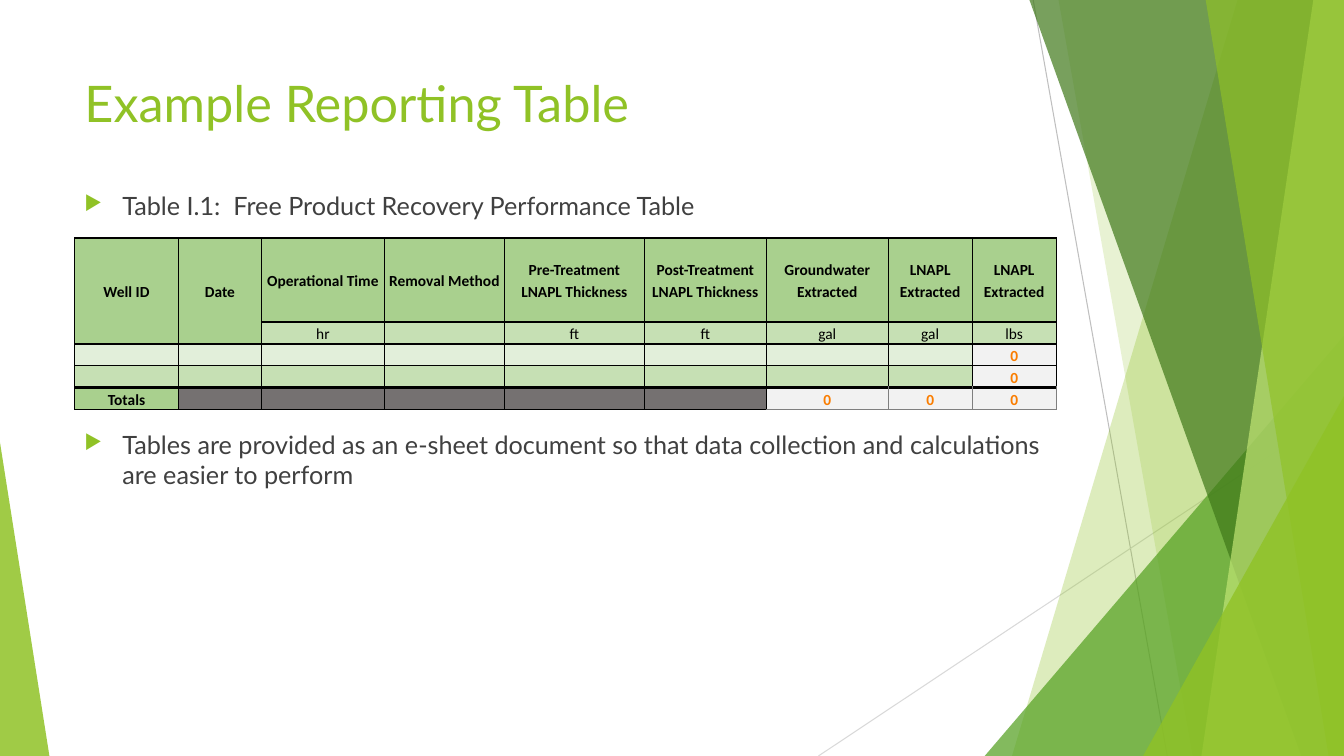
from dataclasses import dataclass
from typing import Any

from lxml.etree import SubElement
from pptx import Presentation
from pptx.dml.color import RGBColor
from pptx.enum.shapes import MSO_CONNECTOR, MSO_SHAPE
from pptx.enum.text import MSO_ANCHOR, PP_ALIGN
from pptx.oxml.ns import qn
from pptx.slide import Slide
from pptx.util import Pt

COLORS = {
    "lime": "90C226", "green": "54A021", "forest": "3F7819", "pale": "C0E474",
    "ray_dark": "BFBFBF", "ray_light": "D9D9D9", "body": "404040",
    "black": "000000", "gray_edge": "7F7F7F", "orange": "FA7D00",
    "header": "A9D08E", "units": "C6E0B4", "entry": "E2EFDA",
    "result": "F2F2F2", "blocked": "757171",
}
WIDTH, HEIGHT = 960, 540
FACET_TOP = -0.72


@dataclass
class Ray:
    start: tuple[float, float]
    end: tuple[float, float]
    color: str


@dataclass
class Facet:
    """Band from a slanted left edge to the right side of the slide."""
    top_x: float
    bottom_x: float
    color: str
    opacity: int


@dataclass
class Corner:
    """Right triangle standing on the bottom of the slide."""
    left: float
    top: float
    width: float
    apex: float
    color: str
    opacity: int


@dataclass
class Caption:
    text: str
    top: float
    width: float
    height: float
    size: float
    color: str
    bulleted: bool


RAYS = [
    Ray((738, 0), (833.8, HEIGHT), "ray_dark"),
    Ray((WIDTH, 290.2), (584.6, HEIGHT), "ray_light"),
]
BACKDROP = [
    Facet(884.2, 722.9, "lime", 30),
    Facet(756, 851.8, "lime", 20),
    Corner(703.4, 239.8, 256.6, 1, "green", 72),
    Facet(735.1, 929.5, "forest", 70),
    Facet(938.2, 858.2, "pale", 70),
    Facet(861.1, 949, "lime", 65),
    Corner(816.5, 283, 143.5, 1, "lime", 80),
    Corner(0, 316.1, 35.3, 0, "lime", 85),
]
LEFT = 53.3
TITLE = Caption("Example Reporting Table", 48.2, 676.8, 103.7, 36, "lime", False)
BULLETS = [
    Caption("Table I.1:  Free Product Recovery Performance Table",
            132.5, 701.3, 37.4, 18, "body", True),
    Caption("Tables are provided as an e-sheet document so that data collection "
            "and calculations are easier to perform",
            303.1, 701.3, 54, 18, "body", True),
]

# Table content and the widths of its heavier rules
COLUMN_WIDTHS = [74.2, 59.3, 87.9, 85.7, 100, 87.1, 87.1, 60, 60]
ROW_HEIGHTS = [60, 15.7, 15.7, 15.7, 15.7]
ROWS = [
    ["Well ID", "Date", "Operational Time", "Removal Method",
     "Pre-Treatment LNAPL Thickness", "Post-Treatment LNAPL Thickness",
     "Groundwater Extracted", "LNAPL Extracted", "LNAPL Extracted"],
    ["", "", "hr", "", "ft", "ft", "gal", "gal", "lbs"],
    [""] * 8 + ["0"],
    [""] * 8 + ["0"],
    ["Totals"] + [""] * 5 + ["0"] * 3,
]
ROW_FILLS = ["header", "units", "entry", "units", "blocked"]
ROW_RULES = {2: 1.5, 4: 2.25}
COLUMN_RULES = {1: 1.5}
TOTALS_ROW, FIRST_TOTAL = 4, 6


def apply(target: Any, values: dict[str, Any]) -> None:
    for name, value in values.items():
        setattr(target, name, value)


def rgb(color: str) -> RGBColor:
    return RGBColor.from_string(COLORS[color])


def draw_ray(slide: Slide, ray: Ray) -> None:
    line = slide.shapes.add_connector(
        MSO_CONNECTOR.STRAIGHT, *(Pt(v) for v in ray.start + ray.end))
    line.line.color.rgb = rgb(ray.color)
    line.line.width = Pt(0.75)
    SubElement(line._element.spPr, qn("a:effectLst"))


def draw_backdrop_part(slide: Slide, part: Facet | Corner) -> None:
    if isinstance(part, Facet):
        outline = slide.shapes.build_freeform(Pt(part.top_x), Pt(FACET_TOP), scale=1.0)
        outline.add_line_segments([
            (Pt(WIDTH), Pt(FACET_TOP)), (Pt(WIDTH), Pt(HEIGHT)),
            (Pt(part.bottom_x), Pt(HEIGHT))], close=True)
        shape = outline.convert_to_shape()
    else:
        shape = slide.shapes.add_shape(
            MSO_SHAPE.ISOSCELES_TRIANGLE, Pt(part.left), Pt(part.top),
            Pt(part.width), Pt(HEIGHT - part.top))
        shape.adjustments[0] = part.apex
    shape.shadow.inherit = False
    shape.line.fill.background()
    shape.fill.solid()
    shape.fill.fore_color.rgb = rgb(part.color)
    tint = shape._element.spPr.find(f"{qn('a:solidFill')}/{qn('a:srgbClr')}")
    SubElement(tint, qn("a:alpha"), val=str(part.opacity * 1000))


def draw_caption(slide: Slide, caption: Caption) -> None:
    frame = slide.shapes.add_textbox(
        Pt(LEFT), Pt(caption.top), Pt(caption.width), Pt(caption.height)).text_frame
    apply(frame, {"word_wrap": True, "vertical_anchor": MSO_ANCHOR.TOP})
    paragraph = frame.paragraphs[0]
    words = paragraph.add_run()
    words.text = caption.text
    apply(words.font, {"name": "Lato", "size": Pt(caption.size)})
    words.font.color.rgb = rgb(caption.color)
    if caption.bulleted:
        paragraph.space_before = Pt(10)
        props = paragraph._p.get_or_add_pPr()
        props.set("marL", str(Pt(27)))
        props.set("indent", str(Pt(-27)))
        SubElement(SubElement(props, qn("a:buClr")), qn("a:srgbClr"), val=COLORS["lime"])
        SubElement(props, qn("a:buSzPct"), val="80000")
        SubElement(props, qn("a:buChar"), char="▶")


def draw_borders(cell: Any, row: int, column: int) -> None:
    in_totals = row == TOTALS_ROW and column >= FIRST_TOTAL
    below = row + (cell.span_height if cell.is_merge_origin else 1)
    edges = {
        "lnL": (COLUMN_RULES.get(column, 1), in_totals and column > FIRST_TOTAL),
        "lnR": (COLUMN_RULES.get(column + 1, 1), in_totals),
        "lnT": (ROW_RULES.get(row, 1), False),
        "lnB": (ROW_RULES.get(below, 1), in_totals),
    }
    props = cell._tc.get_or_add_tcPr()
    for tag, (weight, is_gray) in edges.items():
        edge = SubElement(props, qn(f"a:{tag}"), w=str(Pt(weight)))
        SubElement(SubElement(edge, qn("a:solidFill")), qn("a:srgbClr"),
                   val=COLORS["gray_edge" if is_gray else "black"])


def fill_cell(cell: Any, row: int, column: int, text: str) -> None:
    is_result = text == "0"
    draw_borders(cell, row, column)
    fill = "result" if is_result else ROW_FILLS[row]
    if text == "Totals":
        fill = "header"
    cell.fill.solid()
    cell.fill.fore_color.rgb = rgb(fill)
    apply(cell, {"vertical_anchor": MSO_ANCHOR.MIDDLE, "margin_left": Pt(2.9),
                 "margin_right": Pt(2.9), "margin_top": 0, "margin_bottom": 0})
    paragraph = cell.text_frame.paragraphs[0]
    apply(paragraph, {"alignment": PP_ALIGN.CENTER, "line_spacing": 1.15})
    if text:
        words = paragraph.add_run()
        words.text = text
        apply(words.font, {"name": "Calibri", "size": Pt(11), "bold": row != 1})
        words.font.color.rgb = rgb("orange" if is_result else "black")
    else:
        # Keeps blank rows as low as the filled ones
        SubElement(paragraph._p, qn("a:endParaRPr"), sz="1100")


def draw_recovery_table(slide: Slide) -> None:
    table = slide.shapes.add_table(
        len(ROWS), len(COLUMN_WIDTHS), Pt(LEFT), Pt(170),
        Pt(sum(COLUMN_WIDTHS)), Pt(sum(ROW_HEIGHTS))).table
    apply(table, {"first_row": False, "horz_banding": False})
    for column, width in zip(table.columns, COLUMN_WIDTHS):
        column.width = Pt(width)
    for row, height in zip(table.rows, ROW_HEIGHTS):
        row.height = Pt(height)
    for column in range(2):
        table.cell(0, column).merge(table.cell(1, column))
    for row, texts in enumerate(ROWS):
        for column, text in enumerate(texts):
            fill_cell(table.cell(row, column), row, column, text)


def main() -> None:
    deck = Presentation()
    apply(deck, {"slide_width": Pt(WIDTH), "slide_height": Pt(HEIGHT)})
    slide = deck.slides.add_slide(deck.slide_layouts[6])
    # Backdrop
    for ray in RAYS:
        draw_ray(slide, ray)
    for part in BACKDROP:
        draw_backdrop_part(slide, part)
    # Content
    draw_caption(slide, TITLE)
    draw_recovery_table(slide)
    for bullet in BULLETS:
        draw_caption(slide, bullet)
    deck.save("out.pptx")


if __name__ == "__main__":
    main()
